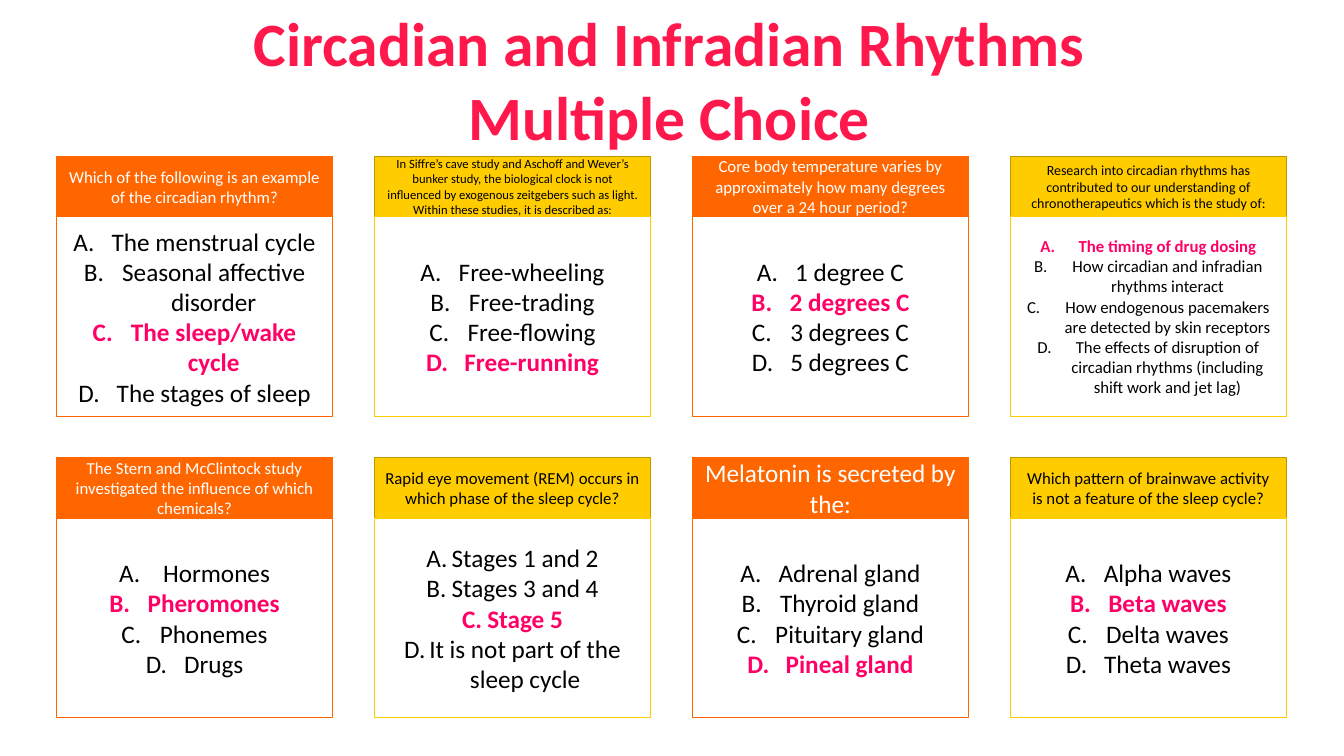
from pptx import Presentation
from pptx.dml.color import RGBColor
from pptx.enum.shapes import MSO_SHAPE
from pptx.enum.text import MSO_ANCHOR, PP_ALIGN
from pptx.oxml.xmlchemy import OxmlElement
from pptx.util import Inches, Pt

RECT = MSO_SHAPE.RECTANGLE
MIDDLE = MSO_ANCHOR.MIDDLE
CENTER = PP_ALIGN.CENTER

# Content: question, its size, answers, their size, index of the right answer
TITLE = "Circadian and Infradian Rhythms Multiple Choice"
CARDS = [
    ("Which of the following is an example of the circadian rhythm?", "body",
     ["The menstrual cycle", "Seasonal affective disorder",
      "The sleep/wake cycle", "The stages of sleep"], "big", 2),
    ("In Siffre’s cave study and Aschoff and Wever’s bunker study, the "
     "biological clock is not influenced by exogenous zeitgebers such as light. "
     "Within these studies, it is described as:", "tiny",
     ["Free-wheeling", "Free-trading", "Free-flowing", "Free-running"], "big", 3),
    ("Core body temperature varies by approximately how many degrees "
     "over a 24 hour period?", "body",
     ["1 degree C", "2 degrees C", "3 degrees C", "5 degrees C"], "big", 1),
    ("Research into circadian rhythms has contributed to our understanding of "
     "chronotherapeutics which is the study of:", "small",
     ["The timing of drug dosing",
      "How circadian and infradian rhythms interact",
      "How endogenous pacemakers are detected by skin receptors",
      "The effects of disruption of circadian rhythms "
      "(including shift work and jet lag)"], "body", 0),
    ("The Stern and McClintock study investigated the influence of "
     "which chemicals?", "body",
     [" Hormones", "Pheromones", "Phonemes", "Drugs"], "big", 1),
    ("Rapid eye movement (REM) occurs in which phase of the sleep cycle?", "body",
     ["Stages 1 and 2", "Stages 3 and 4", "Stage 5",
      "It is not part of the sleep cycle"], "big", 2),
    ("Melatonin is secreted by the:", "big",
     ["Adrenal gland", "Thyroid gland", "Pituitary gland", "Pineal gland"],
     "big", 3),
    ("Which pattern of brainwave activity is not a feature of the sleep cycle?",
     "body",
     ["Alpha waves", "Beta waves", "Delta waves", "Theta waves"], "big", 1),
]
TIGHT = 5  # the card with a narrower list indent

# Theme
THEME = {
    "font": "Calibri",
    "size": {"title": 44, "big": 18, "body": 12, "small": 10, "tiny": 9},
    "title": "FF184B", "right": "FF0066", "ink": "000000", "paper": "FFFFFF",
    # header fill, header line, header text
    "heads": [("FF6600", "FF6600", "FFFFFF"), ("FFCC00", "BD9700", "000000")],
}

# Grid
WIDE, HIGH = 13.33, 7.5
COLS = 4
LEFT, TOP = 0.56, 1.55
CARD, HEAD, BODY = 2.74, 0.6, 1.98
STEP = (WIDE - 2 * LEFT - CARD - 0.04) / (COLS - 1) + 0.01
DROP = 2.99


def write(para, text, size, color, bold=False):
    para.alignment = CENTER
    run = para.add_run()
    run.text = text
    look = {"name": THEME["font"], "size": Pt(THEME["size"][size]), "bold": bold}
    for key, val in look.items():
        setattr(run.font, key, val)
    run.font.color.rgb = RGBColor.from_string(color)


def box(slide, x, y, high, fill, line):
    shape = slide.shapes.add_shape(
        RECT, Inches(x), Inches(y), Inches(CARD), Inches(high))
    shape.shadow.inherit = False
    shape.fill.solid()
    shape.fill.fore_color.rgb = RGBColor.from_string(fill)
    shape.line.color.rgb = RGBColor.from_string(line)
    shape.line.width = Pt(1)
    frame = shape.text_frame
    frame.word_wrap = True
    frame.vertical_anchor = MIDDLE
    return frame


def letter(para, indent):
    props = para._p.get_or_add_pPr()
    props.set("marL", str(Inches(indent)))
    props.set("indent", str(-Inches(indent)))
    mark = OxmlElement("a:buAutoNum")
    mark.set("type", "alphaUcPeriod")
    props.append(mark)


deck = Presentation()
deck.slide_width, deck.slide_height = Inches(WIDE), Inches(HIGH)
slide = deck.slides.add_slide(deck.slide_layouts[6])

# Question cards
for num, (ask, ask_size, picks, pick_size, right) in enumerate(CARDS):
    row, col = divmod(num, COLS)
    x, y = LEFT + col * STEP, TOP + row * DROP
    fill, edge, ink = THEME["heads"][col % 2]
    head = box(slide, x, y, HEAD, fill, edge)
    write(head.paragraphs[0], ask, ask_size, ink)

    body = box(slide, x, y + HEAD, BODY, THEME["paper"], fill)
    for pos, pick in enumerate(picks):
        para = body.add_paragraph() if pos else body.paragraphs[0]
        hit = pos == right
        write(para, pick, pick_size, THEME["right" if hit else "ink"], hit)
        letter(para, 0.25 if num == TIGHT else 0.38)

# Title
frame = slide.shapes.add_textbox(
    Inches(2.4), 0, Inches(8.48), Inches(1.58)).text_frame
frame.word_wrap = True
write(frame.paragraphs[0], TITLE, "title", THEME["title"], True)

deck.save("out.pptx")
